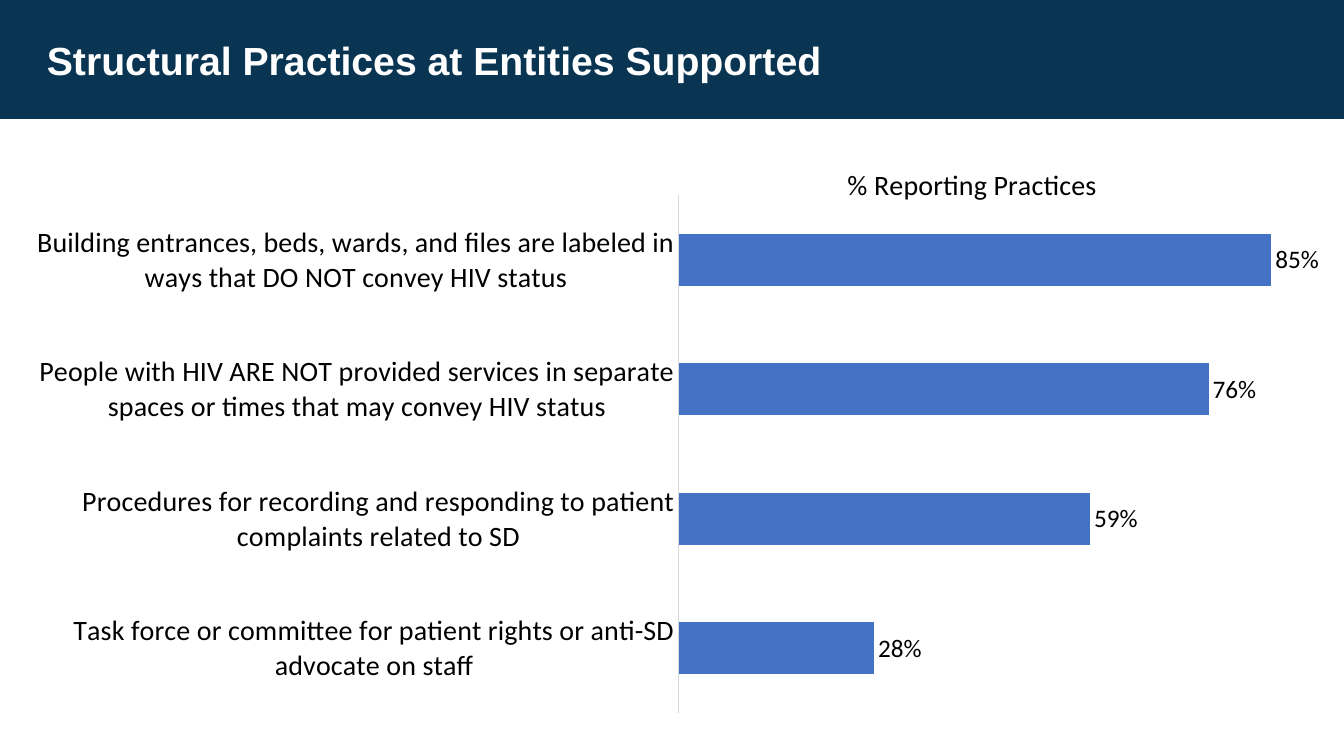
from lxml.etree import SubElement
from pptx import Presentation
from pptx.chart.data import CategoryChartData
from pptx.dml.color import RGBColor
from pptx.enum.chart import XL_CHART_TYPE, XL_LABEL_POSITION, XL_TICK_MARK
from pptx.enum.shapes import MSO_SHAPE
from pptx.enum.text import MSO_ANCHOR
from pptx.oxml import parse_xml
from pptx.oxml.ns import nsdecls, qn
from pptx.util import Emu, Pt


def px(n):
    return Emu(round(n * 12192000 / 1344))


def style(font, size, color, name="Calibri", bold=False):
    font.size = Pt(size)
    font.name = name
    font.bold = bold
    font.color.rgb = RGBColor.from_string(color)


practices = [
    ("Task force or committee for patient rights or anti-SD advocate on staff", 0.28),
    ("Procedures for recording and responding to patient complaints related to SD", 0.59),
    ("People with HIV ARE NOT provided services in separate spaces or times that may convey HIV status", 0.76),
    ("Building entrances, beds, wards, and files are labeled in ways that DO NOT convey HIV status", 0.85),
]

prs = Presentation()
prs.slide_width, prs.slide_height = px(1344), px(756)
s = prs.slides.add_slide(prs.slide_layouts[6])

band = s.shapes.add_shape(MSO_SHAPE.RECTANGLE, 0, 0, px(1344), px(119))
band.shadow.inherit = False
band.fill.solid()
band.fill.fore_color.rgb = RGBColor.from_string("093552")
band.line.fill.background()

title = s.shapes.add_textbox(px(37), px(37), px(1214), px(81))
tf = title.text_frame
tf.word_wrap = True
tf.vertical_anchor = MSO_ANCHOR.TOP
tf.text = "Structural Practices at Entities Supported"
p = tf.paragraphs[0]
p.line_spacing = 0.9
style(p.runs[0].font, 28, "FFFFFF", "Arial", True)

data = CategoryChartData(number_format="0%")
data.categories = [name for name, share in practices]
data.add_series("Series 1", [share for name, share in practices])
chart = s.shapes.add_chart(
    XL_CHART_TYPE.BAR_CLUSTERED, px(19), px(130), px(1307), px(598), data
).chart
style(chart.font, 18, "000000")
chart.has_legend = False

chart.has_title = True
chart.chart_title.include_in_layout = False
tf = chart.chart_title.text_frame
tf.text = "% Reporting Practices"
style(tf.paragraphs[0].runs[0].font, 20, "000000")

cat = chart.category_axis
cat.major_tick_mark = cat.minor_tick_mark = XL_TICK_MARK.NONE
cat.has_major_gridlines = False
style(cat.tick_labels.font, 20, "000000")
cat.format.line.color.rgb = RGBColor.from_string("D9D9D9")
cat.format.line.width = Pt(0.75)

val = chart.value_axis
val.minimum_scale, val.maximum_scale = 0, 0.9
val.has_major_gridlines = False
val.visible = False

plot = chart.plots[0]
plot.gap_width = 150
plot.overlap = -25
plot.vary_by_categories = False
bars = plot.series[0]
bars.format.fill.solid()
bars.format.fill.fore_color.rgb = RGBColor.from_string("4472C4")

labels = bars.data_labels
labels.show_value = True
labels.number_format = "0%"
labels.number_format_is_linked = False
labels.position = XL_LABEL_POSITION.OUTSIDE_END
style(labels.font, 18, "000000")

title_box = {"xMode": "edge", "yMode": "edge", "x": 0.63, "y": 0.05}
plot_box = {"layoutTarget": "inner", "xMode": "edge", "yMode": "edge",
            "x": 0.505, "y": 0.109, "w": 0.48, "h": 0.866}
c_title = chart.chart_title.format and chart.element.find(".//" + qn("c:title"))
c_plot = chart.element.find(".//" + qn("c:plotArea"))
for parent, index, box in ((c_title, 1, title_box), (c_plot, 0, plot_box)):
    for old in parent.findall(qn("c:layout")):
        parent.remove(old)
    layout = parse_xml(f"<c:layout {nsdecls('c')}><c:manualLayout/></c:layout>")
    for tag, value in box.items():
        SubElement(layout[0], qn("c:" + tag)).set("val", str(value))
    parent.insert(index, layout)

prs.save("out.pptx")
